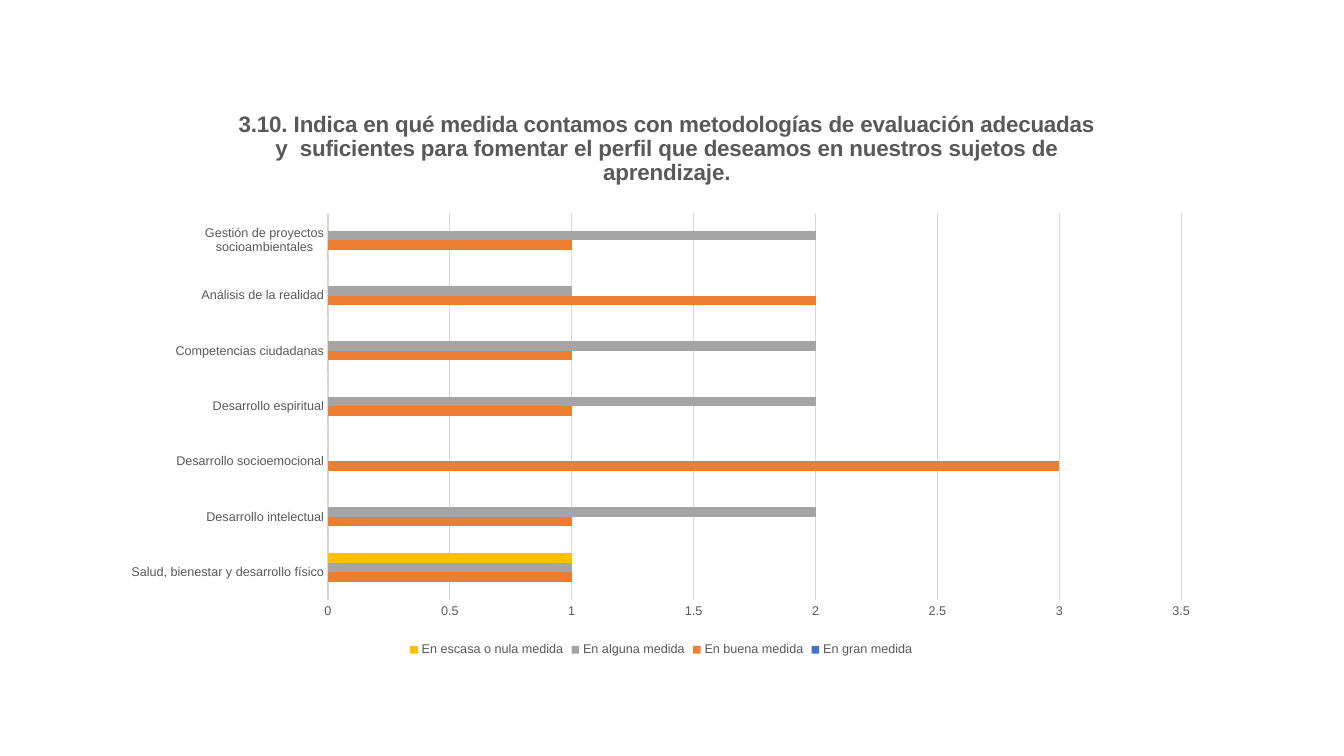
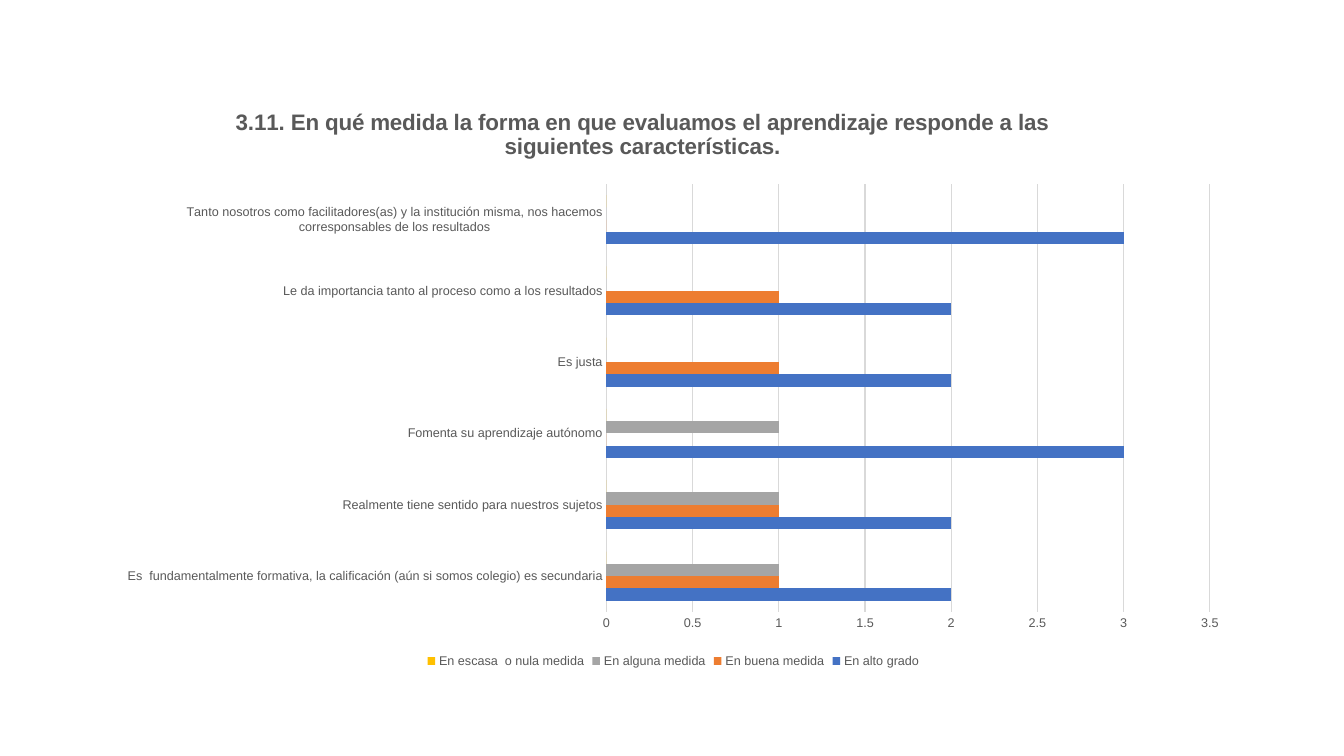
from lxml import etree
from pptx import Presentation
from pptx.chart.data import CategoryChartData
from pptx.dml.color import RGBColor
from pptx.enum.chart import XL_CHART_TYPE, XL_LEGEND_POSITION, XL_TICK_MARK
from pptx.oxml.ns import qn
from pptx.util import Pt

BAR = XL_CHART_TYPE.BAR_CLUSTERED
BOTTOM = XL_LEGEND_POSITION.BOTTOM
NO_TICK = XL_TICK_MARK.NONE


def rgb(value):
    return RGBColor.from_string(value)


def style(font, size=9, color="595959", bold=False, name="Arial"):
    font.size, font.bold, font.name = Pt(size), bold, name
    font.color.rgb = rgb(color)


def write(tf, text, **fmt):
    r = tf.paragraphs[0].add_run()
    r.text = text
    style(r.font, **fmt)


def place(parent, index, **values):
    """Give a chart part a fixed place, in fractions of the chart."""
    for old in parent.findall(qn("c:layout")):
        parent.remove(old)
    layout = etree.Element(qn("c:layout"))
    manual = etree.SubElement(layout, qn("c:manualLayout"))
    for tag, value in values.items():
        etree.SubElement(manual, qn("c:" + tag)).set("val", str(value))
    parent.insert(index, layout)


class Deck:
    SERIES_COLORS = ("4472C4", "ED7D31", "A5A5A5", "FFC000")
    RULE = "D9D9D9"

    def __init__(self):
        self.prs = Presentation()
        self.prs.slide_width, self.prs.slide_height = Pt(960), Pt(540)

    def new_slide(self):
        self.s = self.prs.slides.add_slide(self.prs.slide_layouts[6])

    def rule(self, line):
        line.color.rgb = rgb(self.RULE)
        line.width = Pt(0.75)

    def axes(self, chart):
        cat, val = chart.category_axis, chart.value_axis
        for axis in (cat, val):
            axis.major_tick_mark = axis.minor_tick_mark = NO_TICK
            style(axis.tick_labels.font)
        self.rule(cat.format.line)
        val.format.line.fill.background()
        val.minimum_scale, val.maximum_scale, val.major_unit = 0, 3.5, 0.5
        val.has_major_gridlines = True
        self.rule(val.major_gridlines.format.line)

    def title(self, chart, text, x, y):
        chart.has_title = True
        write(chart.chart_title.text_frame, text, size=16, bold=True)
        chart.chart_title.include_in_layout = False
        place(chart.element.xpath("c:chart/c:title")[0], 1,
              xMode="edge", yMode="edge", x=x, y=y)

    def legend(self, chart):
        chart.has_legend = True
        chart.legend.position = BOTTOM
        chart.legend.include_in_layout = False
        style(chart.legend.font)

    def bar_chart(self, box, plot, title, title_at, cats, series):
        """All places are in points on the slide."""
        left, top, width, height = box
        data = CategoryChartData()
        data.categories = cats
        for name, values in series:
            data.add_series(name, values)
        chart = self.s.shapes.add_chart(BAR, *map(Pt, box), data).chart
        style(chart.font, size=10, color="000000")

        # Bars
        bars = chart.plots[0]
        bars.gap_width, bars.overlap, bars.vary_by_categories = 182, 0, False
        for ser, color in zip(bars.series, self.SERIES_COLORS):
            ser.invert_if_negative = False
            ser.format.fill.solid()
            ser.format.fill.fore_color.rgb = rgb(color)

        # Surroundings
        self.axes(chart)
        self.legend(chart)
        self.title(chart, title, (title_at[0] - left) / width,
                   (title_at[1] - top) / height)
        place(chart.element.xpath("c:chart/c:plotArea")[0], 0,
              layoutTarget="inner", xMode="edge", yMode="edge",
              x=(plot[0] - left) / width, y=(plot[1] - top) / height,
              w=plot[2] / width, h=plot[3] / height)


def main():
    deck = Deck()

    # Methods of evaluation
    deck.new_slide()
    deck.bar_chart(
        box=(78.5, 71.3, 787.7, 401),
        plot=(234.3, 152, 609.5, 276.5),
        title="3.10. Indica en qué medida contamos con metodologías de evaluación "
              "adecuadas y  suficientes para fomentar el perfil que deseamos en "
              "nuestros sujetos de aprendizaje.",
        title_at=(167.5, 75.5),
        cats=["Salud, bienestar y desarrollo físico", "Desarrollo intelectual",
              "Desarrollo socioemocional", "Desarrollo espiritual",
              "Competencias ciudadanas", "Análisis de la realidad",
              "Gestión de proyectos socioambientales"],
        series=[("En gran medida", (0, 0, 0, 0, 0, 0, 0)),
                ("En buena medida", (1, 1, 3, 1, 1, 2, 1)),
                ("En alguna medida", (1, 2, 0, 2, 2, 1, 2)),
                ("En escasa o nula medida", (1, 0, 0, 0, 0, 0, 0))])

    # Features of evaluation
    deck.new_slide()
    deck.bar_chart(
        box=(74.9, 67, 812.2, 413.3),
        plot=(433.2, 131.5, 431, 305.5),
        title="3.11. En qué medida la forma en que evaluamos el aprendizaje "
              "responde a las siguientes características.",
        title_at=(165.5, 74),
        cats=["Es  fundamentalmente formativa, la calificación (aún si somos "
              "colegio) es secundaria",
              "Realmente tiene sentido para nuestros sujetos",
              "Fomenta su aprendizaje autónomo", "Es justa",
              "Le da importancia tanto al proceso como a los resultados",
              "Tanto nosotros como facilitadores(as) y la institución misma, "
              "nos hacemos corresponsables de los resultados"],
        series=[("En alto grado", (2, 2, 3, 2, 2, 3)),
                ("En buena medida", (1, 1, 0, 1, 1, 0)),
                ("En alguna medida", (1, 1, 1, 0, 0, 0)),
                ("En escasa  o nula medida", (0, 0, 0, 0, 0, 0))])

    deck.prs.save("out.pptx")


if __name__ == "__main__":
    main()
